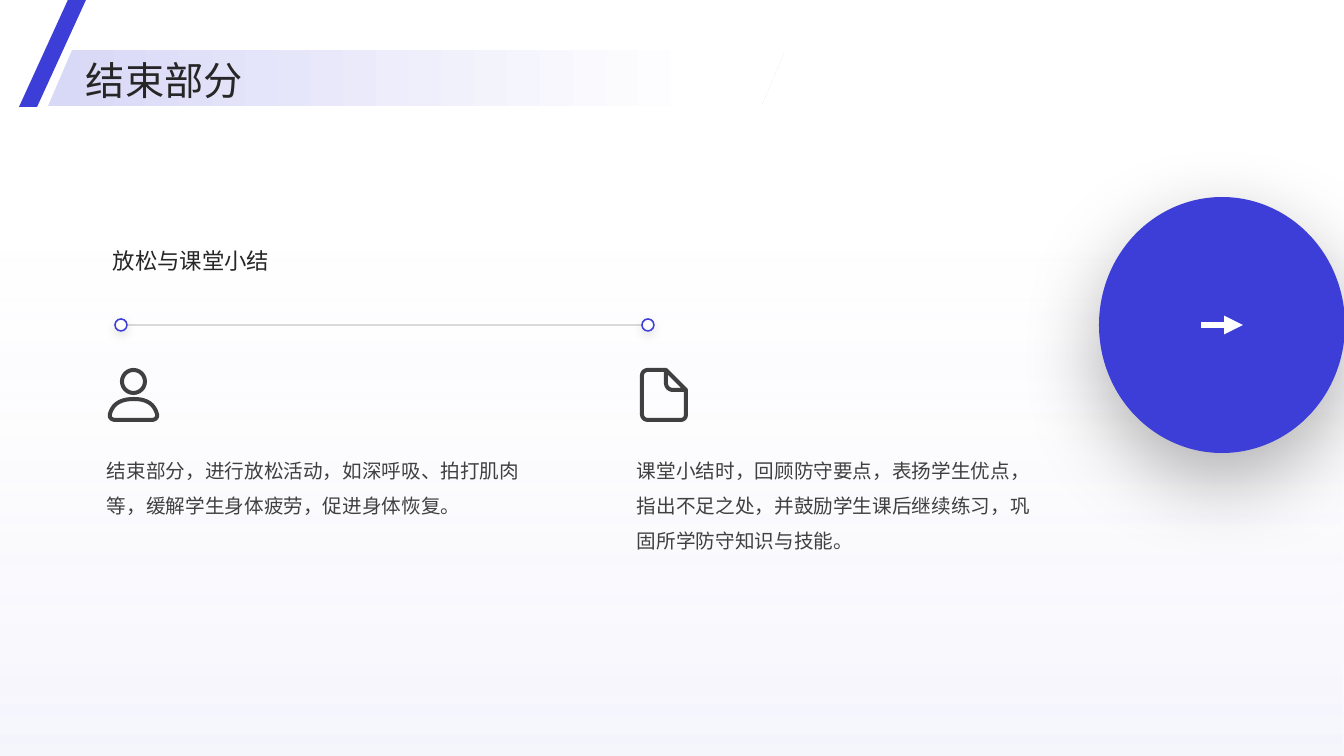
from dataclasses import dataclass
from typing import Optional

from lxml.etree import SubElement
from pptx import Presentation
from pptx.dml.color import RGBColor
from pptx.enum.shapes import MSO_CONNECTOR as Connector, MSO_SHAPE as Shape
from pptx.enum.text import MSO_ANCHOR as Anchor
from pptx.oxml.ns import qn
from pptx.util import Emu, Pt

WIDTH, HEIGHT = 1344, 756
EMU_PER_PX = 12192000 / WIDTH
FONT = "Noto Sans CJK SC"
BLUE, LAVENDER, WHITE = "3D3ED7", "D8D8F7", "FFFFFF"
INK, GRAY, PALE_GRAY = "262626", "404040", "D9D9D9"
TIMELINE_Y = 325
DOT_SIZE = 12
ICON_STROKE = 2.85

Point = tuple[int, int]
Segment = tuple[Point, ...]  # one point: straight line; three: Bezier curve


@dataclass
class Box:
    left: int
    top: int
    width: int
    height: int

    def emu(self) -> list[Emu]:
        return [px(n) for n in (self.left, self.top, self.width, self.height)]


@dataclass
class Label:
    text: str
    box: Box
    size: int
    color: str
    spacing: float = 1.5
    anchor: Anchor = Anchor.TOP
    margin_right: int = 0
    margin_y: int = 0


@dataclass
class Stop:
    position: float
    color: str
    alpha: int = 100


@dataclass
class Shadow:
    alpha: int
    blur: int
    distance: int


@dataclass
class Outline:
    start: Point
    segments: list[Segment]


LABELS = [
    Label("结束部分，进行放松活动，如深呼吸、拍打肌肉等，缓解学生身体疲劳，促进身体恢复。",
          Box(107, 443, 444, 182), 14, GRAY, margin_right=24, margin_y=4),
    Label("课堂小结时，回顾防守要点，表扬学生优点，指出不足之处，并鼓励学生课后继续练习，巩固所学防守知识与技能。",
          Box(637, 443, 435, 182), 14, GRAY, margin_right=24, margin_y=4),
    Label("放松与课堂小结", Box(113, 140, 986, 134), 16, INK, anchor=Anchor.BOTTOM),
    Label("结束部分", Box(86, 52, 1184, 51), 28, INK, 1.1, Anchor.MIDDLE),
]

PERSON_HEAD = Box(122, 370, 23, 23)
PERSON_BODY = Outline((134, 399), [
    ((150, 399), (155, 407), (157, 414)), ((158, 418), (155, 420), (151, 420)),
    ((116, 420),),
    ((112, 420), (109, 418), (110, 414)), ((112, 407), (117, 399), (134, 399)),
])
DOCUMENT = Outline((686, 390), [
    ((666, 370),), ((648, 370),), ((645, 370), (642, 372), (642, 376)),
    ((642, 414),), ((642, 418), (645, 420), (648, 420)),
    ((680, 420),), ((684, 420), (686, 418), (686, 414)),
    ((686, 390),), ((673, 390),), ((669, 390), (666, 387), (666, 383)),
    ((666, 370),),
])


def px(length: float) -> Emu:
    return Emu(round(length * EMU_PER_PX))


def rgb(color: str) -> RGBColor:
    return RGBColor.from_string(color)


def style_shape(shape, fill: Optional[str] = None, line: Optional[str] = None,
                weight: float = 1) -> None:
    shape.shadow.inherit = False
    if fill:
        shape.fill.solid()
        shape.fill.fore_color.rgb = rgb(fill)
    else:
        shape.fill.background()
    if line:
        shape.line.color.rgb = rgb(line)
        shape.line.width = Pt(weight)
    else:
        shape.line.fill.background()


def add_preset(slide, kind: Shape, box: Box, fill: Optional[str] = None,
               line: Optional[str] = None, weight: float = 1):
    shape = slide.shapes.add_shape(kind, *box.emu())
    style_shape(shape, fill, line, weight)
    return shape


def set_gradient(shape, stops: list[Stop], angle: int) -> None:
    """Fill with two stops; the angle runs counter-clockwise."""
    shape.fill.gradient()
    shape.fill.gradient_angle = angle
    for gradient_stop, stop in zip(shape.fill.gradient_stops, stops):
        gradient_stop.position = stop.position
        gradient_stop.color.rgb = rgb(stop.color)
    colors = shape._element.spPr.find(qn("a:gradFill")).iter(qn("a:srgbClr"))
    for color, stop in zip(colors, stops):
        SubElement(color, qn("a:alpha"), val=str(stop.alpha * 1000))


def set_shadow(shape, shadow: Shadow) -> None:
    effects = shape._element.spPr.find(qn("a:effectLst"))
    outer = SubElement(effects, qn("a:outerShdw"), blurRad=str(Pt(shadow.blur)),
                       dist=str(Pt(shadow.distance)), dir="5400000",
                       algn="t", rotWithShape="0")
    color = SubElement(outer, qn("a:srgbClr"), val="000000")
    SubElement(color, qn("a:alpha"), val=str(shadow.alpha * 1000))


def add_line(slide, left: int, right: int, color: str, weight: float,
             arrow: bool = False) -> None:
    """Draw a horizontal line at the height of the timeline."""
    y = px(TIMELINE_Y)
    connector = slide.shapes.add_connector(Connector.STRAIGHT, px(left), y, px(right), y)
    connector.line.color.rgb = rgb(color)
    connector.line.width = Pt(weight)
    if arrow:
        line = connector.line._get_or_add_ln()
        line.set("cap", "sq")
        SubElement(line, qn("a:tailEnd"), type="triangle")
    SubElement(connector._element.spPr, qn("a:effectLst"))


def curve_points(start: Point, segment: Segment, steps: int = 16) -> list[tuple[float, float]]:
    first, second, end = segment
    points = []
    for step in range(1, steps + 1):
        t = step / steps
        weights = ((1 - t) ** 3, 3 * t * (1 - t) ** 2, 3 * t * t * (1 - t), t ** 3)
        controls = (start, first, second, end)
        points.append(tuple(sum(w * p[axis] for w, p in zip(weights, controls))
                            for axis in (0, 1)))
    return points


def add_outline(slide, outline: Outline) -> None:
    current, points = outline.start, []
    for segment in outline.segments:
        points += curve_points(current, segment) if len(segment) == 3 else segment
        current = segment[-1]
    builder = slide.shapes.build_freeform(*map(px, outline.start))
    builder.add_line_segments([(px(x), px(y)) for x, y in points], close=False)
    style_shape(builder.convert_to_shape(), line=GRAY, weight=ICON_STROKE)


def add_label(slide, label: Label) -> None:
    frame = slide.shapes.add_textbox(*label.box.emu()).text_frame
    frame.word_wrap = True
    frame.vertical_anchor = label.anchor
    frame.margin_left, frame.margin_right = 0, px(label.margin_right)
    frame.margin_top = frame.margin_bottom = px(label.margin_y)
    frame.text = label.text
    paragraph = frame.paragraphs[0]
    paragraph.line_spacing = label.spacing
    font = paragraph.runs[0].font
    font.name, font.size, font.color.rgb = FONT, Pt(label.size), rgb(label.color)
    SubElement(font._element, qn("a:ea"), typeface=FONT)


def main() -> None:
    presentation = Presentation()
    presentation.slide_width, presentation.slide_height = px(WIDTH), px(HEIGHT)
    slide = presentation.slides.add_slide(presentation.slide_layouts[6])

    backdrop = add_preset(slide, Shape.RECTANGLE, Box(0, 0, WIDTH, HEIGHT))
    set_gradient(backdrop, [Stop(0, LAVENDER, 25), Stop(0.85, WHITE, 0)], 90)
    disc = add_preset(slide, Shape.OVAL, Box(1099, 197, 246, 256), BLUE)
    set_shadow(disc, Shadow(30, 60, 20))
    add_line(slide, 1204, 1243, WHITE, 4.5, arrow=True)

    add_line(slide, 123, 654, PALE_GRAY, 0.82)
    for left in (115, 642):
        dot_box = Box(left, TIMELINE_Y - DOT_SIZE // 2, DOT_SIZE, DOT_SIZE)
        dot = add_preset(slide, Shape.OVAL, dot_box, WHITE, BLUE, 1.1)
        set_shadow(dot, Shadow(11, 7, 3))

    add_preset(slide, Shape.OVAL, PERSON_HEAD, line=GRAY, weight=ICON_STROKE)
    for outline in (PERSON_BODY, DOCUMENT):
        add_outline(slide, outline)

    banner = add_preset(slide, Shape.PARALLELOGRAM, Box(48, 50, 737, 56))
    banner.adjustments[0] = 0.43
    set_gradient(banner, [Stop(0, LAVENDER), Stop(0.89, WHITE)], 0)
    for label in LABELS:
        add_label(slide, label)
    stripe = add_preset(slide, Shape.PARALLELOGRAM, Box(19, 0, 67, 107), BLUE)
    stripe.adjustments[0] = 0.73
    presentation.save("out.pptx")


if __name__ == "__main__":
    main()
